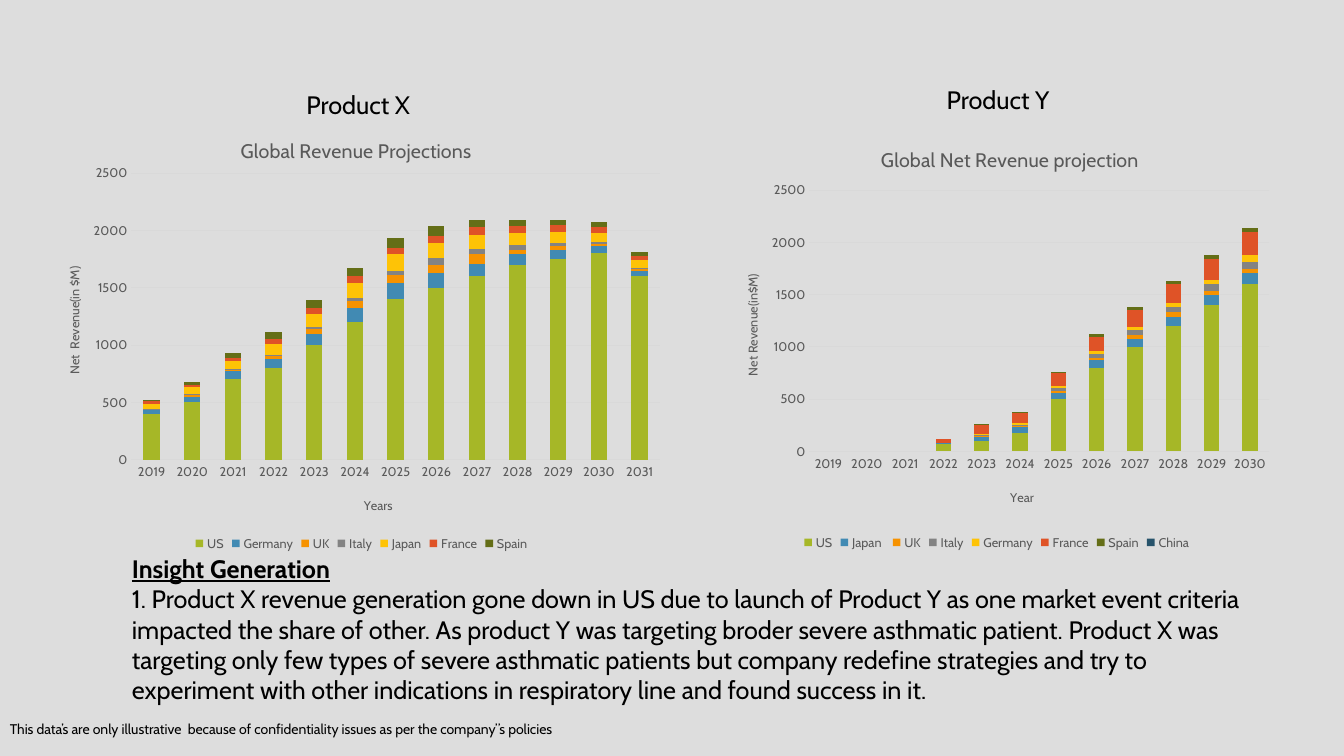
from lxml.etree import SubElement
from pptx import Presentation
from pptx.chart.data import CategoryChartData
from pptx.dml.color import RGBColor
from pptx.enum.chart import XL_CHART_TYPE, XL_LEGEND_POSITION, XL_TICK_MARK
from pptx.oxml.ns import qn
from pptx.util import Inches, Pt

BACKGROUND = RGBColor(0xDD, 0xDD, 0xDD)
BLACK = RGBColor(0, 0, 0)
GRAY = RGBColor(0x59, 0x59, 0x59)
LINE = RGBColor(0xD9, 0xD9, 0xD9)
SERIES_COLORS = [RGBColor.from_string(code) for code in (
    "A6B727", "418AB3", "F69200", "838383", "FEC306", "DF5327", "646E17", "27536B")]
FONT = "Cabin"

# Content: titles hold the wording and the place as fractions of the chart
NOT_LAUNCHED = [None] * 3
CHARTS = [
    {
        "at": (0.5, 1.2, 6.17, 4.31),
        "plot": (0.13, 0.12, 0.85, 0.66),
        "title": ("Global Revenue Projections", 0.3, 0.03),
        "category_title": ("Years", 0.5, 0.86),
        "value_title": ("Net  Revenue(in $M)", 0.02, 0.33),
        "years": range(2019, 2032),
        "series": {
            "US": [400, 500, 700, 800, 1000, 1200, 1400, 1500, 1600, 1700, 1750, 1800, 1600],
            "Germany": [30, 50, 70, 80, 100, 120, 140, 130, 110, 90, 80, 60, 50],
            "UK": [0, 10, 10, 20, 40, 60, 70, 70, 80, 40, 30, 20, 10],
            "Italy": [10, 10, 10, 10, 20, 30, 40, 60, 50, 40, 30, 20, 10],
            "Japan": [50, 60, 70, 100, 110, 130, 140, 130, 120, 110, 100, 80, 70],
            "France": [20, 20, 30, 40, 50, 60, 60, 60, 70, 60, 60, 50, 40],
            "Spain": [10, 30, 40, 60, 70, 70, 80, 90, 60, 50, 40, 40, 30],
        },
    },
    {
        "at": (7.07, 1.25, 5.63, 4.25),
        "plot": (0.17, 0.15, 0.81, 0.61),
        "title": ("Global Net Revenue projection", 0.29, 0.04),
        "category_title": ("Year", 0.52, 0.84),
        "value_title": ("Net Revenue(in$M)", 0.05, 0.34),
        "years": range(2019, 2031),
        "series": {
            "US": NOT_LAUNCHED + [70, 100, 180, 500, 800, 1000, 1200, 1400, 1600],
            "Japan ": NOT_LAUNCHED + [10, 40, 50, 60, 70, 80, 90, 100, 110],
            "UK": NOT_LAUNCHED + [0, 10, 10, 20, 20, 30, 40, 40, 40],
            "Italy": NOT_LAUNCHED + [0, 10, 10, 30, 40, 50, 50, 60, 60],
            "Germany": NOT_LAUNCHED + [0, 10, 20, 20, 30, 30, 40, 40, 70],
            "France": NOT_LAUNCHED + [40, 80, 100, 120, 140, 160, 180, 200, 220],
            "Spain": NOT_LAUNCHED + [0, 10, 10, 10, 20, 30, 30, 40, 40],
            "China": [None] * 12,
        },
    },
]

HEADING = {"size": Pt(18)}
TEXTS = [
    ((2.94, 0.84, 2.21, 0.4), [("Product X", HEADING)]),
    ((9.29, 0.79, 2.21, 0.4), [("Product Y", HEADING)]),
    ((0, 7.1, 10.96, 0.27), [
        ("This data’s are only illustrative  because of confidentiality issues "
         "as per the company”s policies", {"size": Pt(10)})]),
    ((1.21, 5.44, 11.32, 1.62), [
        ("Insight Generation", {"size": Pt(18), "bold": True, "underline": True}),
        ("1. Product X revenue generation gone down in US due to launch of Product Y "
         "as one market event criteria impacted the share of other. As product Y was "
         "targeting broder severe asthmatic patient. Product X was targeting only few "
         "types of severe asthmatic patients but company redefine strategies and try to "
         "experiment with other indications in respiratory line and found success in it.",
         HEADING)]),
]


def set_font(font, color, formats):
    font.color.rgb = color
    for name, value in {"name": FONT, **formats}.items():
        setattr(font, name, value)


def place(element, position, inner=False):
    """Give a chart part a fixed place, in fractions of the chart."""
    for old in element.findall(qn("c:layout")):
        element.remove(old)
    layout = SubElement(element, qn("c:layout"))
    manual = SubElement(layout, qn("c:manualLayout"))
    settings = [("layoutTarget", "inner")] if inner else []
    settings += [("xMode", "edge"), ("yMode", "edge")]
    settings += zip("xywh", position)
    for tag, value in settings:
        SubElement(manual, qn("c:" + tag)).set("val", str(value))
    text = element.find(qn("c:tx"))
    if text is None:
        element.insert(0, layout)
    else:
        text.addnext(layout)


def write_title(title, content, size, rotation=0):
    wording, left, top = content
    frame = title.text_frame
    frame.text = wording
    set_font(frame.paragraphs[0].runs[0].font, GRAY, {"size": Pt(size), "bold": False})
    body = title.element.find(".//" + qn("a:bodyPr"))
    body.set("rot", str(rotation * 60000))
    body.set("vert", "horz")
    place(title.element, (left, top))


def add_revenue_chart(slide, content):
    data = CategoryChartData()
    data.categories = [str(year) for year in content["years"]]
    for name, values in content["series"].items():
        data.add_series(name, values)
    chart = slide.shapes.add_chart(
        XL_CHART_TYPE.COLUMN_STACKED, *map(Inches, content["at"]), data).chart
    set_font(chart.font, BLACK, {"size": Pt(10)})

    # Columns
    plot = chart.plots[0]
    for name, value in {"gap_width": 150, "overlap": 100, "vary_by_categories": False}.items():
        setattr(plot, name, value)
    for series, color in zip(plot.series, SERIES_COLORS):
        series.format.fill.solid()
        series.format.fill.fore_color.rgb = color
    place(chart.element.find(".//" + qn("c:plotArea")), content["plot"], inner=True)

    # Axes
    years, revenue = chart.category_axis, chart.value_axis
    for axis in (years, revenue):
        axis.major_tick_mark = axis.minor_tick_mark = XL_TICK_MARK.NONE
        set_font(axis.tick_labels.font, GRAY, {"size": Pt(9)})
    for name, value in {"minimum_scale": 0, "maximum_scale": 2500, "major_unit": 500}.items():
        setattr(revenue, name, value)
    revenue.format.line.fill.background()
    for line in (years.format.line, revenue.major_gridlines.format.line):
        line.color.rgb = LINE
        line.width = Pt(0.75)

    # Titles and legend
    chart.has_title = True
    write_title(chart.chart_title, content["title"], 14)
    write_title(years.axis_title, content["category_title"], 9)
    write_title(revenue.axis_title, content["value_title"], 9, rotation=-90)
    chart.has_legend = True
    chart.legend.position = XL_LEGEND_POSITION.BOTTOM
    chart.legend.include_in_layout = False
    set_font(chart.legend.font, GRAY, {"size": Pt(9)})


def add_text(slide, position, lines):
    box = slide.shapes.add_textbox(*map(Inches, position))
    frame = box.text_frame
    frame.word_wrap = True
    for index, (wording, formats) in enumerate(lines):
        para = frame.add_paragraph() if index else frame.paragraphs[0]
        span = para.add_run()
        span.text = wording
        set_font(span.font, BLACK, formats)


def main():
    deck = Presentation()
    deck.slide_width, deck.slide_height = Inches(13.33), Inches(7.5)
    page = deck.slides.add_slide(deck.slide_layouts[6])
    page.background.fill.solid()
    page.background.fill.fore_color.rgb = BACKGROUND
    for content in CHARTS:
        add_revenue_chart(page, content)
    for position, lines in TEXTS:
        add_text(page, position, lines)
    deck.save("out.pptx")


if __name__ == "__main__":
    main()
